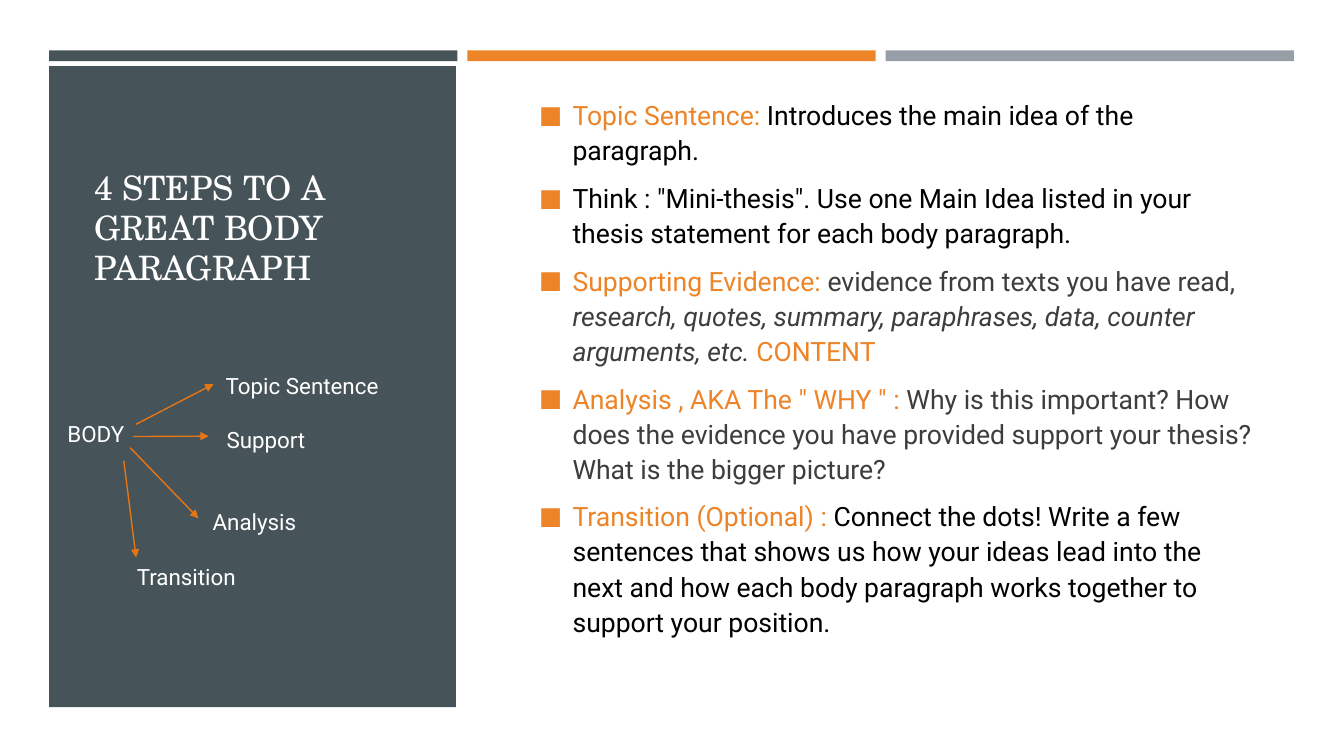
import pptx
import pptx.util
import pptx.dml.color
import pptx.enum.shapes
import pptx.enum.text
import pptx.oxml
import pptx.oxml.ns

Cm, Pt = pptx.util.Cm, pptx.util.Pt
SLATE, ORANGE, GRAY = "465359", "ED8428", "969FA7"
WHITE, BLACK, DARK, ARROW = "FFFFFF", "000000", "3D3D3D", "E67613"
SANS, SERIF = "Roboto", "TeX Gyre Schola"

TITLE = "4 STEPS TO A GREAT BODY PARAGRAPH"
BARS = [SLATE, ORANGE, GRAY]
# Each bullet holds runs of (text, colour, italic)
STEPS = [
    [("Topic Sentence: ", ORANGE, False),
     ("Introduces the main idea of the paragraph.", BLACK, False)],
    [('Think : "Mini-thesis". Use one Main Idea listed in your thesis '
      "statement for each body paragraph.", BLACK, False)],
    [("Supporting Evidence:", ORANGE, False),
     (" evidence from texts you have read, ", DARK, False),
     ("research, quotes, summary, paraphrases, data, counter arguments, etc. ",
      DARK, True),
     ("CONTENT", ORANGE, False)],
    [('Analysis , AKA The " WHY " :', ORANGE, False),
     (" Why is this important? How does the evidence you have provided "
      "support your thesis? What is the bigger picture?", DARK, False)],
    [("Transition (Optional) : ", ORANGE, False),
     ("Connect the dots! Write a few sentences that shows us how your ideas "
      "lead into the next and how each body paragraph works together to "
      "support your position.", BLACK, False)],
]
# Label, left, top, width in cm
LABELS = [
    ("BODY", 1.45, 10.46, 3.5),
    ("Topic Sentence", 5.44, 9.25, 8.05),
    ("Support", 5.46, 10.62, 7.62),
    ("Analysis", 5.11, 12.67, 7.62),
    ("Transition", 3.2, 14.07, 7.62),
]
# Start x, y and end x, y in cm
ARROWS = [
    (3.28, 11.28, 5, 13.06),
    (3.43, 10.69, 5.38, 9.68),
    (3.35, 11, 5.26, 10.99),
    (3.12, 11.61, 3.43, 14.05),
]
BAR_LEFT, BAR_TOP, BAR_WIDE, BAR_STEP, BAR_HIGH = 1.24, 1.27, 10.29, 10.54, 0.27
PANEL = (1.24, 1.67, 10.25, 16.15)
TITLE_BOX = (2.13, 2.59, 8.43, 4.78)
STEPS_BOX = (13.34, 2.13, 18.47, 14.22)
INDENT = 0.84
STEP_FORM = {"line_spacing": 1.1, "space_before": Pt(3), "space_after": Pt(6)}


def rgb(code):
    return pptx.dml.color.RGBColor.from_string(code)


def put(item, form):
    """Set each attribute named in form on item."""
    for name, value in form.items():
        setattr(item, name, value)


def add_bar(box, color):
    bar = slide.shapes.add_shape(
        pptx.enum.shapes.MSO_SHAPE.RECTANGLE, *map(Cm, box))
    bar.shadow.inherit = False
    bar.fill.solid()
    bar.fill.fore_color.rgb = rgb(color)
    bar.line.fill.background()


def add_box(box, anchor):
    frame = slide.shapes.add_textbox(*map(Cm, box)).text_frame
    put(frame, {"word_wrap": True, "vertical_anchor": anchor})
    return frame


def add_run(para, text, size, color, face=SANS, italic=False):
    run = para.add_run()
    run.text = text
    put(run.font, {"size": Pt(size), "name": face, "italic": italic})
    run.font.color.rgb = rgb(color)


def add_mark(para):
    """Give the paragraph a hanging square bullet."""
    props = para._p.get_or_add_pPr()
    props.set("marL", str(Cm(INDENT)))
    props.set("indent", str(-Cm(INDENT)))
    space = pptx.oxml.ns.nsdecls("a")
    for part in (
        f'<a:buClr {space}><a:srgbClr val="{ORANGE}"/></a:buClr>',
        f'<a:buSzPct {space} val="92000"/>',
        f'<a:buFont {space} typeface="{SANS}"/>',
        f'<a:buChar {space} char="■"/>',
    ):
        props.append(pptx.oxml.parse_xml(part))


def add_arrow(ends):
    arrow = slide.shapes.add_connector(
        pptx.enum.shapes.MSO_CONNECTOR.STRAIGHT, *map(Cm, ends))
    arrow.line.width = Pt(1)
    arrow.line.color.rgb = rgb(ARROW)
    space = pptx.oxml.ns.nsdecls("a")
    arrow.line._get_or_add_ln().append(
        pptx.oxml.parse_xml(f'<a:tailEnd {space} type="triangle"/>'))
    arrow._element.spPr.append(
        pptx.oxml.parse_xml(f"<a:effectLst {space}/>"))


deck = pptx.Presentation()
put(deck, {"slide_width": Cm(33.87), "slide_height": Cm(19.05)})
slide = deck.slides.add_slide(deck.slide_layouts[6])
anchors = pptx.enum.text.MSO_ANCHOR

for i, color in enumerate(BARS):
    add_bar((BAR_LEFT + i * BAR_STEP, BAR_TOP, BAR_WIDE, BAR_HIGH), color)
add_bar(PANEL, SLATE)

title = add_box(TITLE_BOX, anchors.BOTTOM)
add_run(title.paragraphs[0], TITLE, 24, WHITE, SERIF)

frame = add_box(STEPS_BOX, anchors.MIDDLE)
for i, runs in enumerate(STEPS):
    para = frame.add_paragraph() if i else frame.paragraphs[0]
    put(para, STEP_FORM)
    add_mark(para)
    for text, color, italic in runs:
        add_run(para, text, 19, color, italic=italic)

for text, left, top, wide in LABELS:
    label = add_box((left, top, wide, 0.94), anchors.TOP)
    add_run(label.paragraphs[0], text, 16, WHITE)
for ends in ARROWS:
    add_arrow(ends)

deck.save("out.pptx")
